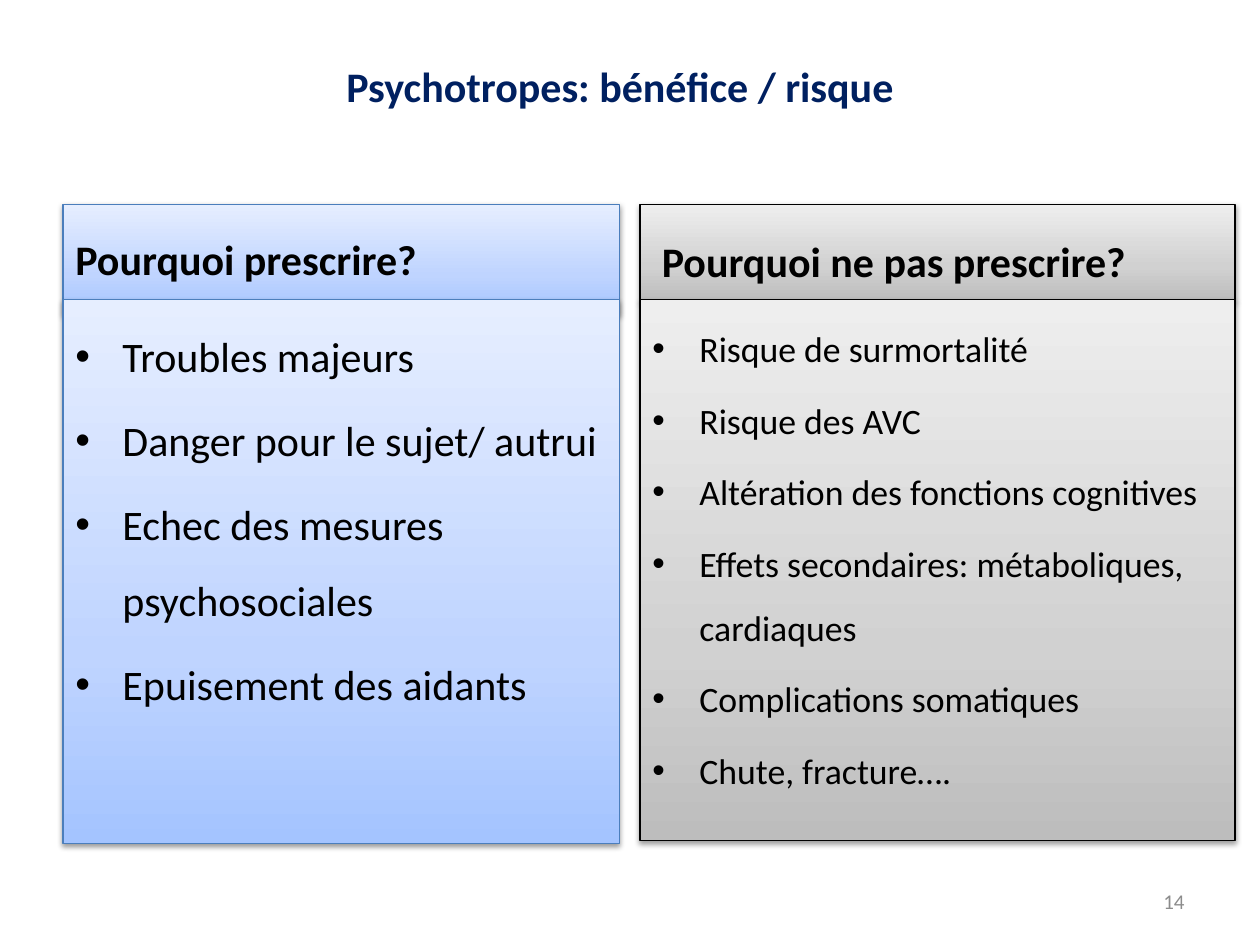
import pptx
import pptx.util
import pptx.dml.color
import pptx.enum.shapes
import pptx.enum.text
import pptx.oxml.ns
from lxml import etree

Cm, Pt = pptx.util.Cm, pptx.util.Pt
ALIGN = pptx.enum.text.PP_ALIGN
ANCHOR = pptx.enum.text.MSO_ANCHOR
qn = pptx.oxml.ns.qn

COLORS = {"title": "002060", "text": "000000", "number": "8C8C8C",
          "blue": "4B7EBC", "black": "000000", "shadow": "000000"}
# Gradient stops from bottom to top
FADES = {"blue": ("A4C4FF", "BFD4FF", "E6EEFF"),
         "black": ("BDBDBD", "D1D1D1", "EEEEEE")}
STOPS = (0, 35000, 100000)

PROS = ["Troubles majeurs", "Danger pour le sujet/ autrui",
        "Echec des mesures psychosociales", "Epuisement des aidants"]
CONS = ["Risque de surmortalité", "Risque des AVC",
        "Altération des fonctions cognitives",
        "Effets secondaires: métaboliques, cardiaques",
        "Complications somatiques", "Chute, fracture…."]


def rgb(name):
    return pptx.dml.color.RGBColor.from_string(COLORS[name])


def sub(parent, tag, **attrs):
    return etree.SubElement(parent, qn(tag), attrs)


def add_bullet(para):
    props = para._p.get_or_add_pPr()
    indent = Cm(0.95)
    props.set("marL", str(indent))
    props.set("indent", str(-indent))
    sub(props, "a:buFont", typeface="Arial")
    sub(props, "a:buChar", char="•")


def put_text(shape, lines, size=24, color="text", bold=False, align=ALIGN.LEFT,
             anchor=ANCHOR.TOP, space=0, lead=1.0, bullet=False):
    """Fill a shape with paragraphs; space is a share of the font size."""
    frame = shape.text_frame
    frame.word_wrap = True
    frame.vertical_anchor = anchor
    for i, line in enumerate(lines):
        para = frame.paragraphs[0] if i == 0 else frame.add_paragraph()
        para.alignment = align
        para.line_spacing = lead
        para.space_before = Pt(size * space)
        if bullet:
            add_bullet(para)
        run = para.add_run()
        run.text = line
        font = run.font
        font.name, font.size, font.bold = "Calibri", Pt(size), bold
        font.color.rgb = rgb(color)


def add_label(slide, box, line, **style):
    label = slide.shapes.add_textbox(*map(Cm, box))
    put_text(label, [line], anchor=ANCHOR.MIDDLE, **style)
    return label


def add_fade(shape, tone):
    shape.fill.gradient()
    shape.fill.gradient_angle = 90
    stops = shape._element.spPr.find(".//" + qn("a:gsLst"))
    for stop in list(stops):
        stops.remove(stop)
    for pos, color in zip(STOPS, FADES[tone]):
        sub(sub(stops, "a:gs", pos=str(pos)), "a:srgbClr", val=color)


def add_shadow(shape):
    shape.shadow.inherit = False
    effects = shape._element.spPr.find(qn("a:effectLst"))
    outer = sub(effects, "a:outerShdw", blurRad="40000", dist="20000",
                dir="5400000", rotWithShape="0")
    color = sub(outer, "a:srgbClr", val=COLORS["shadow"])
    sub(color, "a:alpha", val="38000")


def add_panel(slide, box, tone, lines, **style):
    panel = slide.shapes.add_shape(
        pptx.enum.shapes.MSO_SHAPE.RECTANGLE, *map(Cm, box))
    add_fade(panel, tone)
    panel.line.color.rgb = rgb(tone)
    panel.line.width = Pt(0.75)
    add_shadow(panel)
    put_text(panel, lines, space=0.2, **style)


def main():
    deck = pptx.Presentation()
    deck.slide_width, deck.slide_height = Cm(25.4), Cm(19.05)
    slide = deck.slides.add_slide(deck.slide_layouts[6])

    title = add_label(slide, (1.27, 0.13, 22.86, 3.18),
                      "Psychotropes: bénéfice / risque",
                      color="title", bold=True, align=ALIGN.CENTER)
    title.text_frame.margin_right = Cm(0.65)

    top, mid = 4.12, 6.04
    left, wide = 1.27, 11.22
    add_panel(slide, (left, top, wide, 2.21), "blue", ["Pourquoi prescrire?"],
              bold=True, anchor=ANCHOR.MIDDLE)
    add_panel(slide, (left, mid, wide, 10.97), "blue", PROS,
              lead=1.5, bullet=True)

    left, wide = 12.9, 12
    add_panel(slide, (left, top, wide, mid - top), "black",
              [" Pourquoi ne pas prescrire?"], bold=True, lead=1.5)
    add_panel(slide, (left, mid, wide, 10.9), "black", CONS,
              size=20.4, lead=1.5, bullet=True)

    add_label(slide, (18.2, 17.65, 5.93, 1.02), "14",
              size=12, color="number", align=ALIGN.RIGHT)
    deck.save("out.pptx")


if __name__ == "__main__":
    main()
